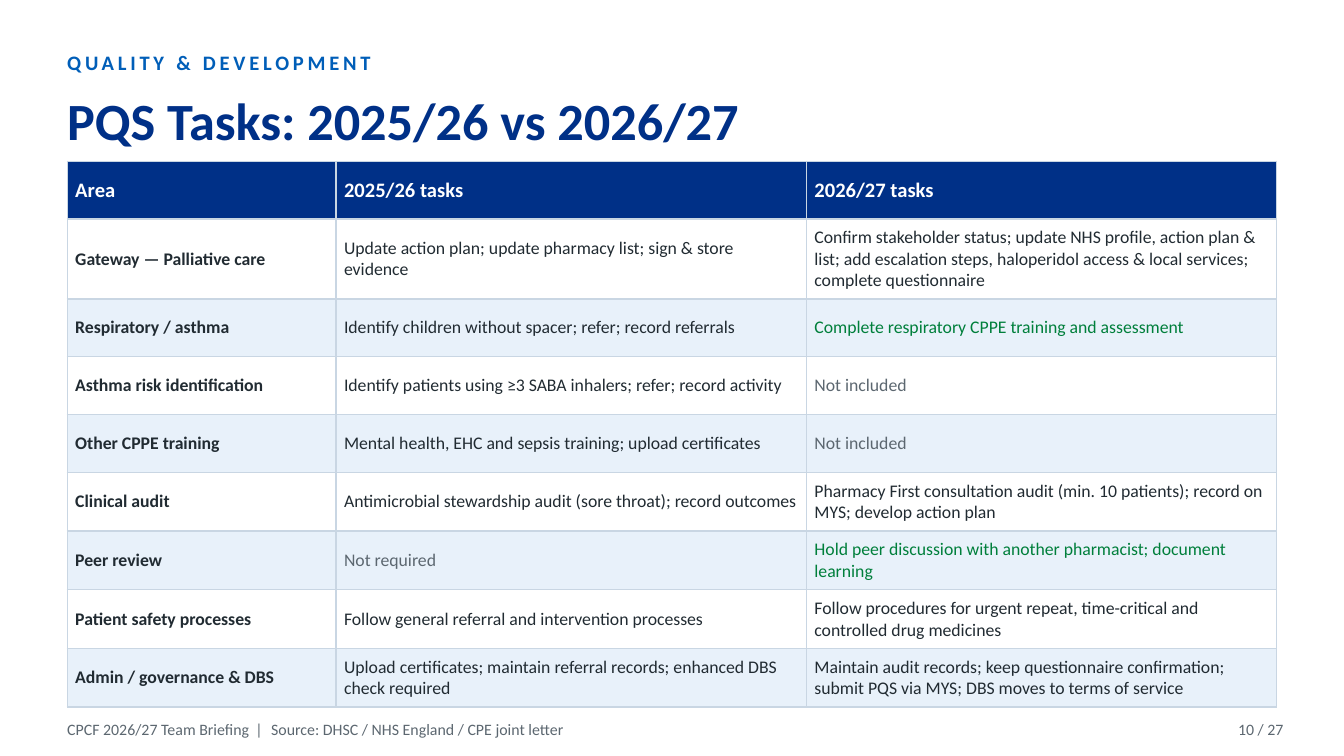
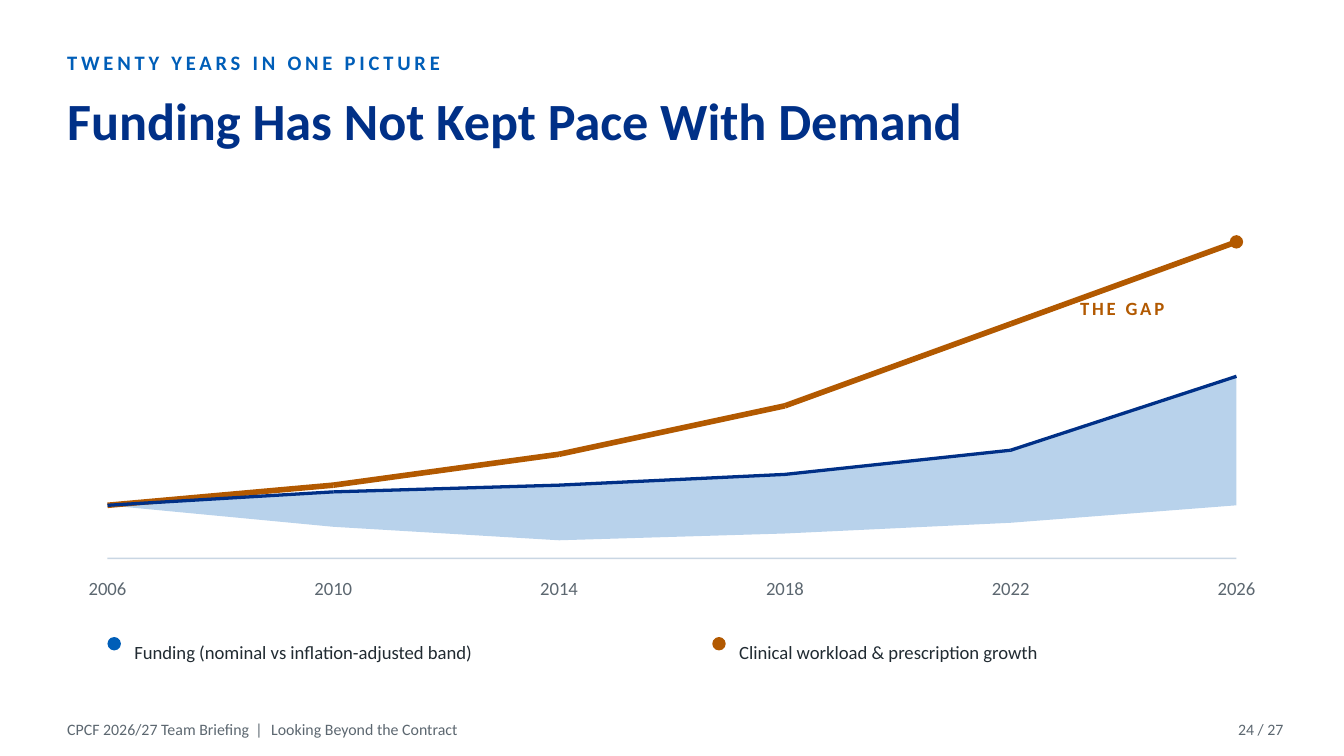
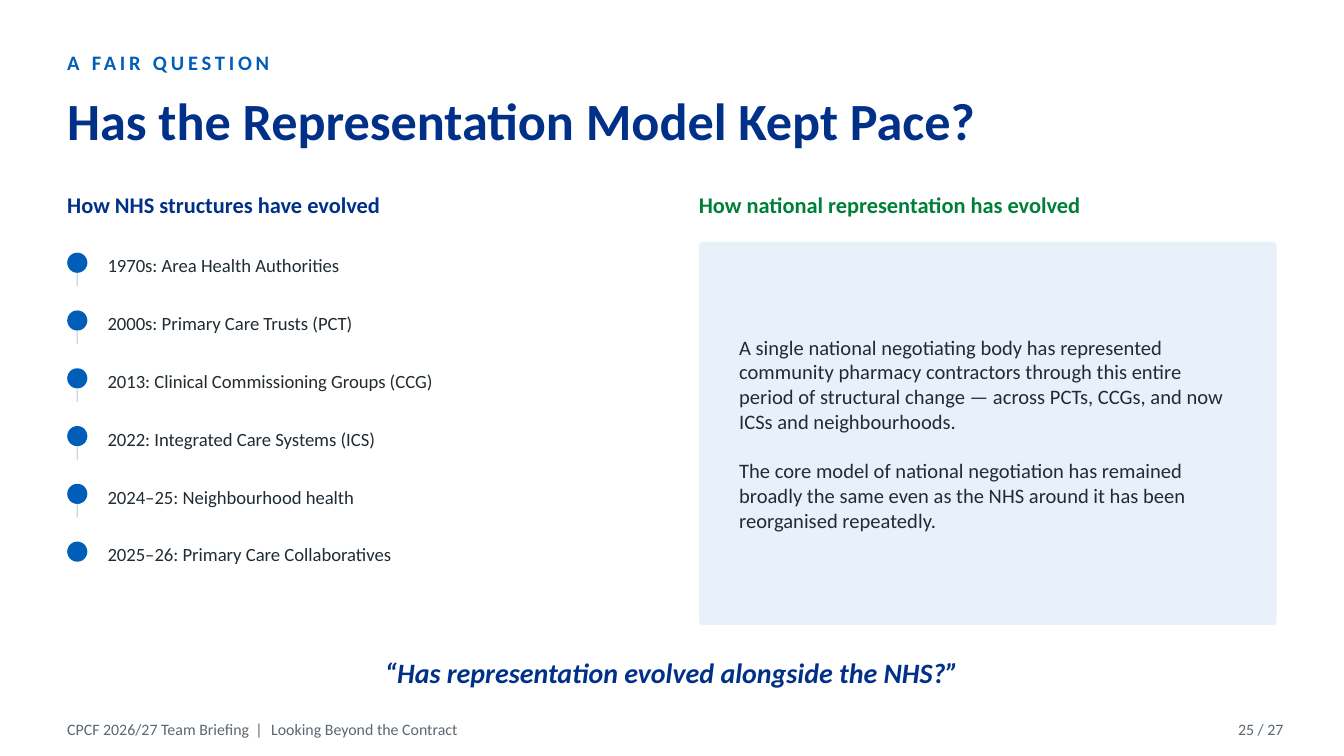
from dataclasses import dataclass

from lxml import etree
from pptx import Presentation
from pptx.dml.color import RGBColor
from pptx.enum.shapes import MSO_CONNECTOR, MSO_SHAPE
from pptx.enum.text import MSO_ANCHOR, PP_ALIGN
from pptx.oxml.ns import qn
from pptx.util import Inches, Pt

LEFT, CENTER, RIGHT = PP_ALIGN.LEFT, PP_ALIGN.CENTER, PP_ALIGN.RIGHT
MIDDLE = MSO_ANCHOR.MIDDLE
OVAL, RECTANGLE, ROUNDED = MSO_SHAPE.OVAL, MSO_SHAPE.RECTANGLE, MSO_SHAPE.ROUNDED_RECTANGLE
STRAIGHT = MSO_CONNECTOR.STRAIGHT

FONT = "Calibri"
COLORS = {
    "navy": "003087",
    "blue": "005EB8",
    "pale": "E8F1FA",
    "rule": "C9D6E3",
    "ink": "212B32",
    "grey": "5C6770",
    "green": "007F3B",
    "amber": "B25900",
    "white": "FFFFFF",
}
MARGIN, CONTENT_WIDTH = 0.5, 9
TOTAL_PAGES = 27
DECK_NAME = "CPCF 2026/27 Team Briefing"
CONTRACT_SOURCE = "Looking Beyond the Contract"


@dataclass(frozen=True)
class Frame:
    left: float
    top: float
    width: float
    height: float

    def lengths(self) -> tuple:
        return Inches(self.left), Inches(self.top), Inches(self.width), Inches(self.height)


@dataclass(frozen=True)
class Style:
    size: float
    color: str = "ink"
    bold: bool = False
    italic: bool = False
    spacing: float = 0
    align: PP_ALIGN = LEFT


@dataclass(frozen=True)
class Heading:
    eyebrow: str
    title: str
    source: str
    number: int


@dataclass(frozen=True)
class TaskRow:
    area: str
    before: str
    after: str
    before_color: str = "ink"
    after_color: str = "ink"


@dataclass(frozen=True)
class Trend:
    heights: tuple
    color: str
    weight: float


@dataclass(frozen=True)
class LegendItem:
    left: float
    label: str
    color: str


EYEBROW = Style(11, "blue", bold=True, spacing=2)
TITLE = Style(28, "navy", bold=True)
FOOTER = Style(8.5, "grey")
FOOTER_BAR = Style(8.5, "grey", spacing=1.3)
PAGE_NUMBER = Style(8.5, "grey", align=RIGHT)
BODY = Style(10)

TASK_HEADER = ("Area", "2025/26 tasks", "2026/27 tasks")
TASK_WIDTHS = (2, 3.5, 3.5)
TASK_ROWS = (
    TaskRow(
        "Gateway — Palliative care",
        "Update action plan; update pharmacy list; sign & store evidence",
        "Confirm stakeholder status; update NHS profile, action plan & list; "
        "add escalation steps, haloperidol access & local services; complete questionnaire",
    ),
    TaskRow(
        "Respiratory / asthma",
        "Identify children without spacer; refer; record referrals",
        "Complete respiratory CPPE training and assessment",
        after_color="green",
    ),
    TaskRow(
        "Asthma risk identification",
        "Identify patients using ≥3 SABA inhalers; refer; record activity",
        "Not included",
        after_color="grey",
    ),
    TaskRow(
        "Other CPPE training",
        "Mental health, EHC and sepsis training; upload certificates",
        "Not included",
        after_color="grey",
    ),
    TaskRow(
        "Clinical audit",
        "Antimicrobial stewardship audit (sore throat); record outcomes",
        "Pharmacy First consultation audit (min. 10 patients); record on MYS; "
        "develop action plan",
    ),
    TaskRow(
        "Peer review",
        "Not required",
        "Hold peer discussion with another pharmacist; document learning",
        before_color="grey",
        after_color="green",
    ),
    TaskRow(
        "Patient safety processes",
        "Follow general referral and intervention processes",
        "Follow procedures for urgent repeat, time-critical and controlled drug medicines",
    ),
    TaskRow(
        "Admin / governance & DBS",
        "Upload certificates; maintain referral records; enhanced DBS check required",
        "Maintain audit records; keep questionnaire confirmation; submit PQS via MYS; "
        "DBS moves to terms of service",
    ),
)

YEARS = range(2006, 2027, 4)
YEAR_XS = tuple(0.8 + 1.68 * index for index in range(len(YEARS)))
WORKLOAD = Trend((3.76, 3.61, 3.38, 3.02, 2.41, 1.8), "amber", 3)
NOMINAL = Trend((3.76, 3.66, 3.61, 3.53, 3.35, 2.8), "navy", 1.75)
ADJUSTED_HEIGHTS = (3.76, 3.92, 4.02, 3.97, 3.89, 3.76)
LEGEND = (
    LegendItem(0.8, "Funding (nominal vs inflation-adjusted band)", "blue"),
    LegendItem(5.3, "Clinical workload & prescription growth", "amber"),
)

MILESTONES = (
    "1970s: Area Health Authorities",
    "2000s: Primary Care Trusts (PCT)",
    "2013: Clinical Commissioning Groups (CCG)",
    "2022: Integrated Care Systems (ICS)",
    "2024–25: Neighbourhood health",
    "2025–26: Primary Care Collaboratives",
)
REPRESENTATION = (
    "A single national negotiating body has represented community pharmacy contractors "
    "through this entire period of structural change — across PCTs, CCGs, and now ICSs "
    "and neighbourhoods.",
    "The core model of national negotiation has remained broadly the same even as the NHS "
    "around it has been reorganised repeatedly.",
)


def rgb(color: str) -> RGBColor:
    return RGBColor.from_string(COLORS[color])


def style_span(span, style: Style) -> None:
    font = span.font
    font.name, font.size = FONT, Pt(style.size)
    font.bold, font.italic = style.bold, style.italic
    font.color.rgb = rgb(style.color)
    if style.spacing:
        span._r.get_or_add_rPr().set("spc", str(round(style.spacing * 100)))


def style_para(para, style: Style) -> None:
    para.alignment = style.align
    for span in para.runs:
        style_span(span, style)


def add_text(page, frame: Frame, text: str, style: Style):
    text_frame = page.shapes.add_textbox(*frame.lengths()).text_frame
    text_frame.word_wrap = True
    text_frame.vertical_anchor = MIDDLE
    text_frame.margin_left = text_frame.margin_right = 0
    text_frame.margin_top = text_frame.margin_bottom = 0
    text_frame.text = text
    for para in text_frame.paragraphs:
        style_para(para, style)
    return text_frame


def paint(shape, color: str) -> None:
    shape.shadow.inherit = False
    shape.fill.solid()
    shape.fill.fore_color.rgb = rgb(color)
    shape.line.fill.background()


def add_block(page, kind: MSO_SHAPE, frame: Frame, color: str):
    block = page.shapes.add_shape(kind, *frame.lengths())
    paint(block, color)
    return block


def add_trend(page, trend: Trend) -> None:
    points = [(Inches(x), Inches(y)) for x, y in zip(YEAR_XS, trend.heights)]
    for start, end in zip(points, points[1:]):
        segment = page.shapes.add_connector(STRAIGHT, *start, *end)
        segment.line.color.rgb = rgb(trend.color)
        segment.line.width = Pt(trend.weight)
        etree.SubElement(segment._element.spPr, qn("a:effectLst"))


def add_page(deck, heading: Heading):
    page = deck.slides.add_slide(deck.slide_layouts[6])
    page.background.fill.solid()
    page.background.fill.fore_color.rgb = rgb("white")
    add_text(page, Frame(MARGIN, 0.32, CONTENT_WIDTH, 0.28), heading.eyebrow, EYEBROW)
    add_text(page, Frame(MARGIN, 0.58, CONTENT_WIDTH, 0.62), heading.title, TITLE)
    footer = add_text(page, Frame(MARGIN, 5.3, 7.2, 0.25), DECK_NAME, FOOTER)
    for text, style in ((" | ", FOOTER_BAR), (heading.source, FOOTER)):
        span = footer.paragraphs[0].add_run()
        span.text = text
        style_span(span, style)
    number = f"{heading.number} / {TOTAL_PAGES}"
    add_text(page, Frame(9, 5.3, 0.55, 0.25), number, PAGE_NUMBER)
    return page


def add_borders(cell) -> None:
    properties = cell._tc.get_or_add_tcPr()
    for side in ("a:lnL", "a:lnR", "a:lnT", "a:lnB"):
        border = etree.SubElement(properties, qn(side), w=str(Pt(0.75)))
        fill = etree.SubElement(border, qn("a:solidFill"))
        etree.SubElement(fill, qn("a:srgbClr"), val=COLORS["rule"])


def fill_cell(cell, text: str, style: Style, color: str) -> None:
    add_borders(cell)
    cell.fill.solid()
    cell.fill.fore_color.rgb = rgb(color)
    cell.vertical_anchor = MIDDLE
    cell.margin_left = cell.margin_right = Inches(0.06)
    cell.margin_top = cell.margin_bottom = Inches(0.06)
    cell.text_frame.text = text
    style_para(cell.text_frame.paragraphs[0], style)


def build_tasks(deck) -> None:
    page = add_page(deck, Heading(
        "QUALITY & DEVELOPMENT", "PQS Tasks: 2025/26 vs 2026/27",
        "Source: DHSC / NHS England / CPE joint letter", 10,
    ))
    row_count = len(TASK_ROWS) + 1
    frame = Frame(MARGIN, 1.2, CONTENT_WIDTH, 0.43 * row_count)
    table = page.shapes.add_table(row_count, len(TASK_HEADER), *frame.lengths()).table
    table.first_row = table.horz_banding = False
    for column, width in zip(table.columns, TASK_WIDTHS):
        column.width = Inches(width)
    for row in table.rows:
        row.height = Inches(0.43)
    for column, text in enumerate(TASK_HEADER):
        fill_cell(table.cell(0, column), text, Style(11, "white", bold=True), "navy")
    for index, task in enumerate(TASK_ROWS, start=1):
        band = "white" if index % 2 else "pale"
        fill_cell(table.cell(index, 0), task.area, Style(9.5, bold=True), band)
        fill_cell(table.cell(index, 1), task.before, Style(9.5, task.before_color), band)
        fill_cell(table.cell(index, 2), task.after, Style(9.5, task.after_color), band)


def add_funding_band(page) -> None:
    lower = list(zip(YEAR_XS, ADJUSTED_HEIGHTS))
    upper = list(zip(YEAR_XS, NOMINAL.heights))
    points = [(Inches(x), Inches(y)) for x, y in lower + upper[::-1]]
    builder = page.shapes.build_freeform(*points[0])
    builder.add_line_segments(points[1:], close=True)
    band = builder.convert_to_shape()
    paint(band, "blue")
    tint = band._element.spPr.find(f"{qn('a:solidFill')}/{qn('a:srgbClr')}")
    etree.SubElement(tint, qn("a:alpha"), val="28000")


def build_funding(deck) -> None:
    page = add_page(deck, Heading(
        "TWENTY YEARS IN ONE PICTURE", "Funding Has Not Kept Pace With Demand",
        CONTRACT_SOURCE, 24,
    ))
    add_funding_band(page)
    add_trend(page, WORKLOAD)
    end_dot = Frame(YEAR_XS[-1] - 0.05, WORKLOAD.heights[-1] - 0.05, 0.1, 0.1)
    add_block(page, OVAL, end_dot, "amber")
    add_trend(page, NOMINAL)
    gap_style = Style(10, "amber", bold=True, spacing=1.5, align=CENTER)
    add_text(page, Frame(7.4, 2.12, 1.9, 0.35), "THE GAP", gap_style)
    add_block(page, RECTANGLE, Frame(0.8, 4.15, 8.4, 0.01), "rule")
    for x, year in zip(YEAR_XS, YEARS):
        year_style = Style(10, "grey", align=CENTER)
        add_text(page, Frame(x - 0.25, 4.25, 0.5, 0.25), str(year), year_style)
    for item in LEGEND:
        add_block(page, OVAL, Frame(item.left, 4.74, 0.1, 0.1), item.color)
        add_text(page, Frame(item.left + 0.2, 4.7, 4.25, 0.3), item.label, BODY)


def build_representation(deck) -> None:
    page = add_page(deck, Heading(
        "A FAIR QUESTION", "Has the Representation Model Kept Pace?", CONTRACT_SOURCE, 25,
    ))
    add_text(page, Frame(MARGIN, 1.35, 4.25, 0.35), "How NHS structures have evolved",
             Style(12, "navy", bold=True))
    for index, milestone in enumerate(MILESTONES):
        top = 1.8 + 0.43 * index
        add_block(page, OVAL, Frame(MARGIN, top + 0.08, 0.15, 0.15), "blue")
        add_text(page, Frame(0.8, top, 3.95, 0.35), milestone, BODY)
        if index < len(MILESTONES) - 1:
            add_block(page, RECTANGLE, Frame(0.57, top + 0.23, 0.01, 0.1), "rule")
    add_text(page, Frame(5.2, 1.35, 4.3, 0.35), "How national representation has evolved",
             Style(12, "green", bold=True))
    panel = add_block(page, ROUNDED, Frame(5.2, 1.8, 4.3, 2.85), "pale")
    panel.adjustments[0] = 0.01
    statement = add_text(page, Frame(5.5, 2, 3.7, 2.45), "\n".join(REPRESENTATION), Style(11))
    statement.paragraphs[1].space_before = Pt(13.4)
    add_text(page, Frame(MARGIN, 4.8, CONTENT_WIDTH, 0.4),
             "“Has representation evolved alongside the NHS?”",
             Style(15, "navy", bold=True, italic=True, align=CENTER))


def main() -> None:
    deck = Presentation()
    deck.slide_width = Inches(10)
    deck.slide_height = Inches(10) * 9 // 16
    build_tasks(deck)
    build_funding(deck)
    build_representation(deck)
    deck.save("out.pptx")


if __name__ == "__main__":
    main()
